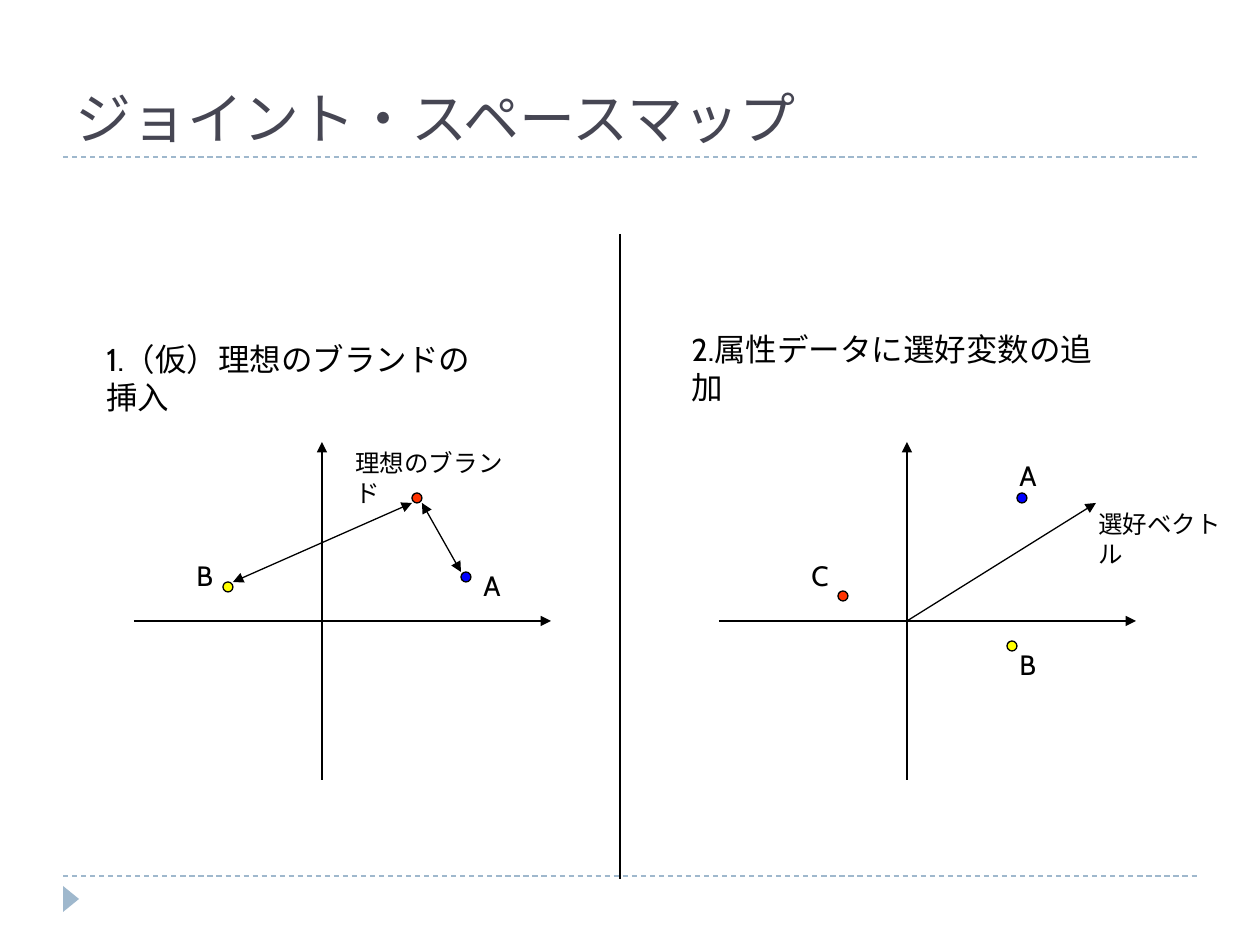
from pptx import Presentation, util as u
from pptx.dml.color import RGBColor
from pptx.enum import dml, shapes, text
from pptx.oxml.ns import qn
from lxml import etree

INK = {"black": "000000", "title": "464653", "rule": "9FB8CD",
       "red": "FF3300", "blue": "0000FF", "yellow": "FFFF00"}
DOT = 10


def px(n):
    return round(n * 914400 / 126)


def hue(name):
    return RGBColor.from_string(INK[name])


def line(slide, start, end, width=1.5, color="black", dash=False, heads=()):
    link = slide.shapes.add_connector(
        shapes.MSO_CONNECTOR.STRAIGHT, *map(px, (*start, *end)))
    link.line.width = u.Pt(width)
    link.line.color.rgb = hue(color)
    if dash:
        link.line.dash_style = dml.MSO_LINE.DASH
    for head in heads:
        etree.SubElement(link.line._get_or_add_ln(), qn("a:" + head), type="triangle")
    etree.SubElement(link._element.spPr, qn("a:effectLst"))


def shape(slide, kind, box, color, edge=None):
    item = slide.shapes.add_shape(kind, *map(px, box))
    item.shadow.inherit = False
    item.fill.solid()
    item.fill.fore_color.rgb = hue(color)
    if edge:
        item.line.color.rgb = hue(edge)
        item.line.width = u.Pt(0.75)
    else:
        item.line.fill.background()
    return item


def label(slide, box, words, size, font="Cabin", color="black",
          anchor=text.MSO_ANCHOR.TOP):
    frame = slide.shapes.add_textbox(*map(px, box)).text_frame
    frame.word_wrap = True
    frame.vertical_anchor = anchor
    para = frame.paragraphs[0]
    para.text = words
    para.font.size = u.Pt(size)
    para.font.name = font
    para.font.color.rgb = hue(color)


def base(slide, box, title):
    """Title, dashed rules and corner mark."""
    x, y, w, h = box
    for level in (h, 855):
        line(slide, (x, y + level), (x + w, y + level), 0.75, "rule", dash=True)
    mark = shape(slide, shapes.MSO_SHAPE.ISOSCELES_TRIANGLE,
                 (x - 5, y + 870, 26, 16), "rule")
    mark.rotation = 90
    label(slide, box, title, 32, "Roboto Slab", "title", text.MSO_ANCHOR.BOTTOM)


def graph(slide, box, dots, arrows, labels):
    """Pair of axes with points, arrows and labels, all relative to the box."""
    x, y, w, h = box
    mid, level = x + 188, y + 179
    line(slide, (x, level), (x + w, level), heads=["tailEnd"])
    line(slide, (mid, y), (mid, y + h), heads=["headEnd"])
    for color, dx, dy in dots:
        shape(slide, shapes.MSO_SHAPE.OVAL, (x + dx, y + dy, DOT, DOT), color, "black")
    for (ax, ay), (bx, by), heads in arrows:
        line(slide, (x + ax, y + ay), (x + bx, y + by), 0.75, heads=heads)
    for words, size, dx, dy, wide, high in labels:
        label(slide, (x + dx, y + dy, wide, high), words, size)


def main():
    deck = Presentation()
    deck.slide_width, deck.slide_height = px(1260), px(945)
    slide = deck.slides.add_slide(deck.slide_layouts[6])
    base(slide, (63, 21, 1134, 136), "ジョイント・スペースマップ")

    # Left: ideal point
    both = ["headEnd", "tailEnd"]
    graph(slide, (134, 442, 417, 338),
          [("red", 278, 51), ("blue", 327, 130), ("yellow", 89, 140)],
          [((99, 140), (278, 61), both), ((327, 130), (288, 61), both)],
          [("理想のブランド", 14, 209, 0, 179, 42),
           ("A", 16, 337, 120, 44, 47),
           ("B", 16, 50, 110, 44, 47),
           ("1.（仮）理想のブランドの挿入", 18, -40, -108, 406, 50)])

    # Divider
    line(slide, (620, 234), (620, 879))

    # Right: preference vector
    graph(slide, (719, 442, 417, 338),
          [("red", 119, 149), ("blue", 298, 51), ("yellow", 288, 199)],
          [((188, 179), (377, 61), ["tailEnd"])],
          [("選好ベクトル", 14, 367, 61, 158, 42),
           ("A", 16, 288, 10, 44, 47),
           ("B", 16, 288, 199, 44, 47),
           ("2.属性データに選好変数の追加", 18, -40, -118, 450, 50),
           ("C", 16, 80, 110, 45, 47)])
    deck.save("out.pptx")


if __name__ == "__main__":
    main()
